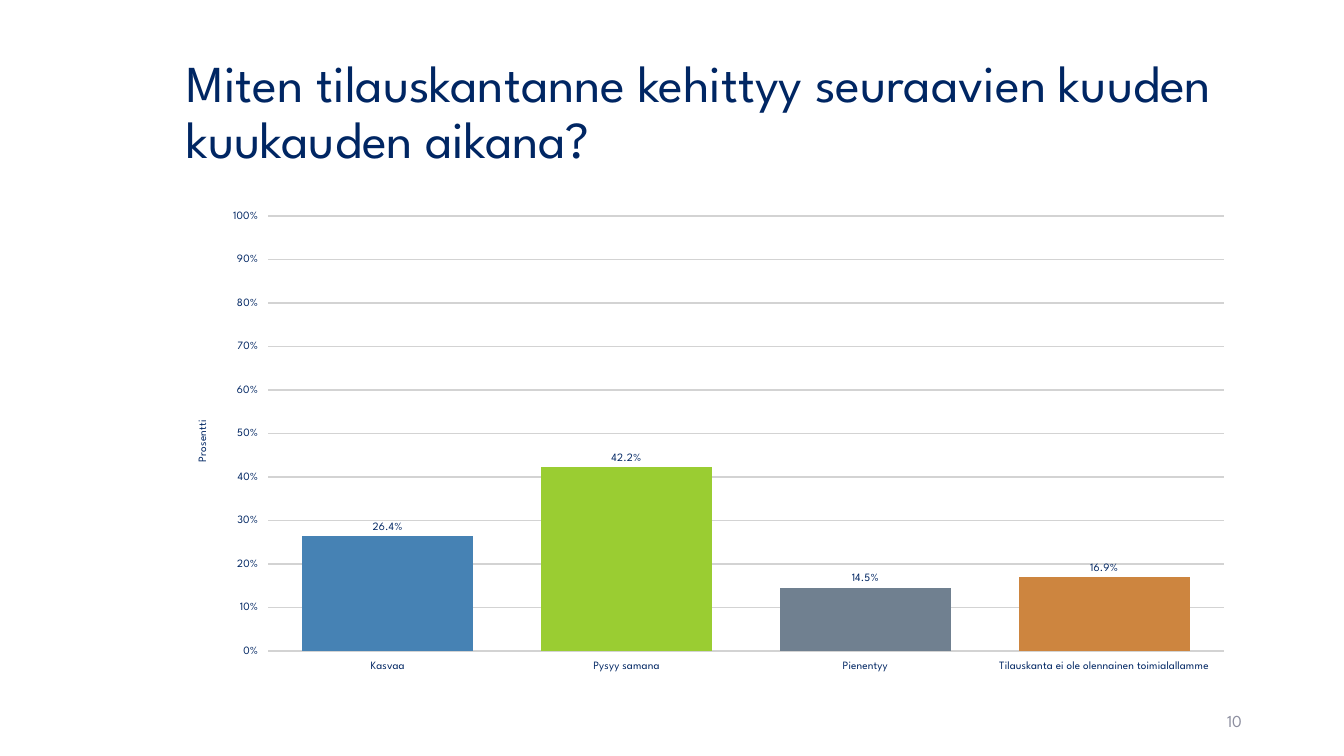
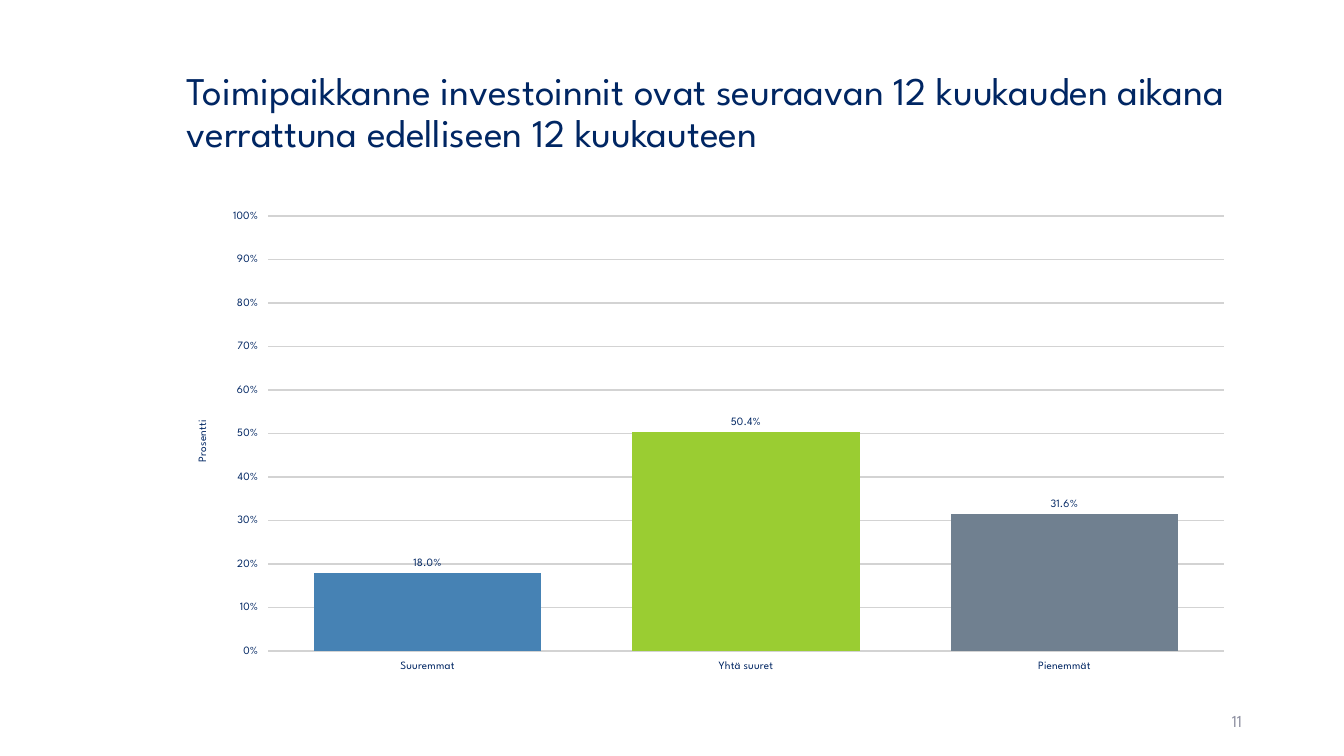
from dataclasses import dataclass

from pptx import Presentation
from pptx import util as u
from pptx.chart.data import CategoryChartData
from pptx.dml.color import RGBColor
from pptx.enum import chart as ch
from pptx.enum import text as tx
from pptx.oxml import parse_xml
from pptx.oxml.ns import nsdecls, qn


@dataclass(frozen=True)
class Theme:
    face: str = "League Spartan"
    ink: str = "002663"
    mute: str = "8C8E9F"
    grid: str = "D3D3D3"
    bars: tuple = ("4682B4", "9ACD32", "708090", "CD853F")
    base: int = 18
    small: int = 8
    page: int = 12


THEME = Theme()
LEFT, WIDTH = 4.45, 26.9
PLOT = {"x": 0.086, "y": 0.03, "w": 0.895, "h": 0.907}

SLIDES = [
    ("Miten tilauskantanne kehittyy seuraavien kuuden kuukauden aikana?", 37, "10",
     {"Kasvaa": 0.264, "Pysyy samana": 0.422, "Pienentyy": 0.145,
      "Tilauskanta ei ole olennainen toimialallamme": 0.169}),
    ("Toimipaikkanne investoinnit ovat seuraavan 12 kuukauden aikana "
     "verrattuna edelliseen 12 kuukauteen", 28, "11",
     {"Suuremmat": 0.18, "Yhtä suuret": 0.504, "Pienemmät": 0.316}),
]


def style(font, size, color=THEME.ink):
    font.name = THEME.face
    font.size = u.Pt(size)
    font.bold = False
    font.color.rgb = RGBColor.from_string(color)


def box(*cms):
    return [u.Cm(n) for n in cms]


def write(shape, words, size, color, align):
    frame = shape.text_frame
    frame.word_wrap = True
    frame.auto_size = tx.MSO_AUTO_SIZE.NONE
    frame.vertical_anchor = tx.MSO_ANCHOR.MIDDLE
    frame.text = words
    para = frame.paragraphs[0]
    para.alignment = align
    style(para.font, size, color)
    return para


def add_title(slide, words, size):
    title = slide.shapes.title
    title.left, title.top, title.width, title.height = box(LEFT, 1.02, WIDTH, 3.68)
    para = write(title, words, size, THEME.ink, tx.PP_ALIGN.LEFT)
    para.line_spacing = 0.9


def add_page(slide, number):
    shape = slide.shapes.add_textbox(*box(23.93, 17.65, 7.62, 1.02))
    para = write(shape, number, THEME.page, THEME.mute, tx.PP_ALIGN.RIGHT)
    para.space_after = u.Pt(6)


def fix_plot(chart):
    area = chart._chartSpace.chart.plotArea
    for old in area.findall(qn("c:layout")):
        area.remove(old)
    modes = "".join(f'<c:{k}Mode val="edge"/>' for k in "xy")
    sizes = "".join(f'<c:{k} val="{v}"/>' for k, v in PLOT.items())
    area.insert(0, parse_xml(
        f'<c:layout {nsdecls("c")}><c:manualLayout><c:layoutTarget val="inner"/>'
        f"{modes}{sizes}</c:manualLayout></c:layout>"))


def style_axes(chart):
    for axis in (chart.category_axis, chart.value_axis):
        style(axis.tick_labels.font, THEME.small)
        axis.major_tick_mark = ch.XL_TICK_MARK.OUTSIDE
        axis.format.line.fill.background()
    axis = chart.value_axis
    axis.minimum_scale, axis.maximum_scale, axis.major_unit = 0, 1, 0.1
    axis.tick_labels.number_format = "0%"
    axis.tick_labels.number_format_is_linked = False
    line = axis.major_gridlines.format.line
    line.color.rgb = RGBColor.from_string(THEME.grid)
    line.width = u.Pt(1)
    frame = axis.axis_title.text_frame
    frame.text = "Prosentti"
    style(frame.paragraphs[0].font, THEME.small)


def style_bars(plot):
    plot.gap_width, plot.overlap = 40, -2
    plot.vary_by_categories = False
    series = plot.series[0]
    for i, color in enumerate(THEME.bars[:len(plot.categories)]):
        fill = series.points[i].format.fill
        fill.solid()
        fill.fore_color.rgb = RGBColor.from_string(color)
    labels = series.data_labels
    labels.show_value = True
    labels.number_format = "0.0%"
    labels.number_format_is_linked = False
    labels.position = ch.XL_LABEL_POSITION.OUTSIDE_END
    style(labels.font, THEME.small)


def add_bars(slide, shares):
    data = CategoryChartData()
    data.categories = list(shares)
    data.add_series("Series 1", list(shares.values()))
    frame = slide.shapes.add_chart(
        ch.XL_CHART_TYPE.COLUMN_CLUSTERED, *box(LEFT, 5.08, WIDTH, 12.09), data)
    chart = frame.chart
    chart.has_title = chart.has_legend = False
    style(chart.font, THEME.base)
    fix_plot(chart)
    style_axes(chart)
    style_bars(chart.plots[0])


def main():
    deck = Presentation()
    deck.slide_width, deck.slide_height = box(33.87, 19.05)
    for words, size, number, shares in SLIDES:
        slide = deck.slides.add_slide(deck.slide_layouts[5])
        add_title(slide, words, size)
        add_page(slide, number)
        add_bars(slide, shares)
    deck.save("out.pptx")


if __name__ == "__main__":
    main()
